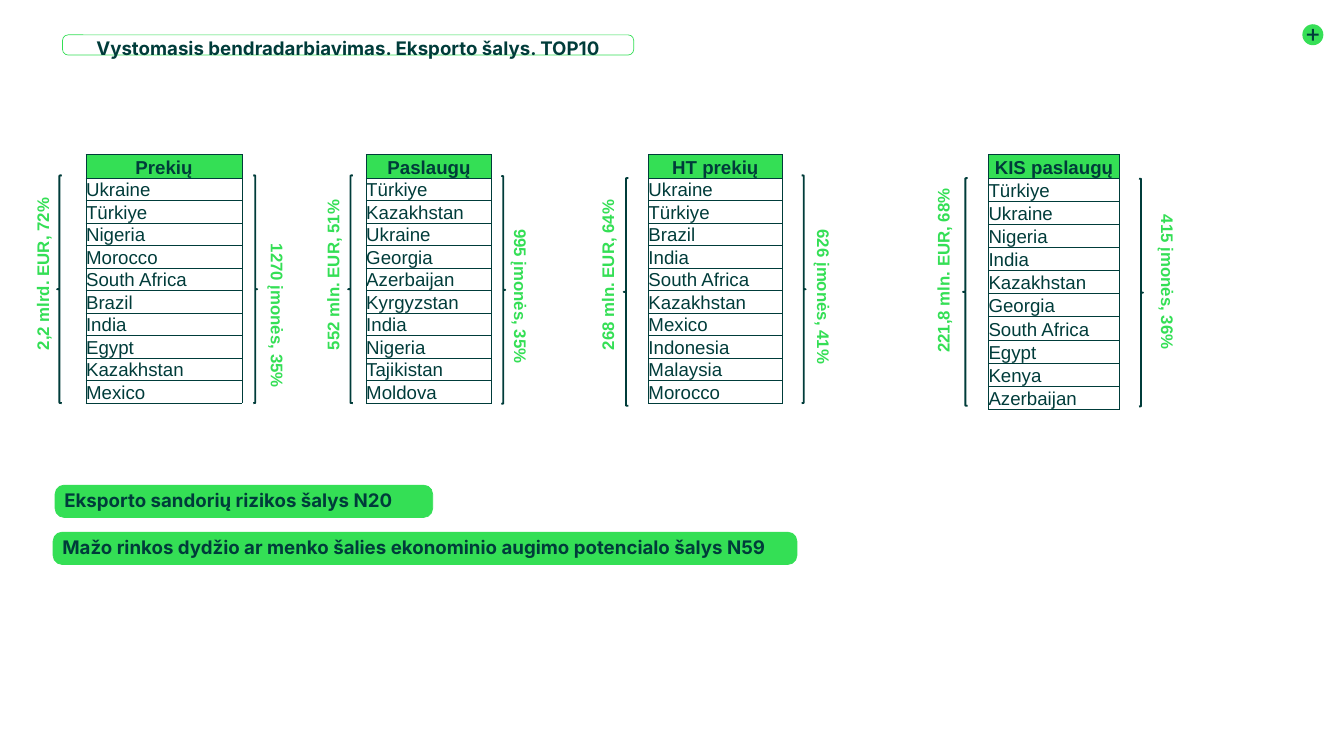
from dataclasses import dataclass

from lxml import etree
from pptx import Presentation
from pptx.dml.color import RGBColor
from pptx.enum import shapes, text
from pptx.oxml import ns
from pptx.util import Pt


@dataclass(frozen=True)
class Theme:
    """Colours, fonts and type sizes of the slide."""
    green: str = "34DF55"
    badge: str = "36DF56"
    dark: str = "003C3A"
    body_font: str = "Arial"
    head_font: str = "Inter"
    label: int = 18
    body: int = 20


@dataclass(frozen=True)
class Side:
    """A brace and its vertical label, as offsets from the table corner."""
    label: str
    brace: tuple
    label_at: tuple


T = Theme()
HEADER_H, BRACE_H, LABEL_BOX = 25.2, 244, 72
PANELS = [
    ((92.2, 165.6, 167), 24.1, "Prekių",
     ["Ukraine", "Türkiye", "Nigeria", "Morocco", "South Africa",
      "Brazil", "India", "Egypt", "Kazakhstan", "Mexico"],
     Side("2,2 mlrd. EUR, 72%", (-31, 22.3), (-61.2, 144.7)),
     Side("1270 įmonės, 35%", (179.2, 22.3), (147.6, 88.6))),
    ((392.4, 165.6, 134.6), 24.1, "Paslaugų",
     ["Türkiye", "Kazakhstan", "Ukraine", "Georgia", "Azerbaijan",
      "Kyrgyzstan", "India", "Nigeria", "Tajikistan", "Moldova"],
     Side("552 mln. EUR, 51%", (-19.4, 22.3), (-50.4, 144.7)),
     Side("995 įmonės, 35%", (144.7, 23), (108, 72.7))),
    ((694.8, 165.6, 143.3), 24.1, "HT prekių",
     ["Ukraine", "Türkiye", "Brazil", "India", "South Africa",
      "Kazakhstan", "Mexico", "Indonesia", "Malaysia", "Morocco"],
     Side("268 mln. EUR, 64%", (-26.6, 25.2), (-58.3, 144.7)),
     Side("626 įmonės, 41%", (164.2, 22.3), (130.3, 73.4))),
    ((1059.1, 165.6, 140.4), 24.8, "KIS paslaugų",
     ["Türkiye", "Ukraine", "Nigeria", "India", "Kazakhstan",
      "Georgia", "South Africa", "Egypt", "Kenya", "Azerbaijan"],
     Side("221,8 mln. EUR, 68%", (-27.3, 25.2), (-63.3, 147.6)),
     Side("415 įmonės, 36%", (161.3, 25.9), (134.7, 57.6))),
]


def rgb(color):
    """Turn a hex string into a colour."""
    return RGBColor.from_string(color)


def set_font(p, name, size, color, bold):
    """Style a whole paragraph."""
    f = p.font
    f.name, f.size, f.bold = name, Pt(size), bold
    f.color.rgb = rgb(color)


def set_margins(target, size):
    """Give a cell or text frame the same margin on every side."""
    target.margin_left = target.margin_right = Pt(size)
    target.margin_top = target.margin_bottom = Pt(size)


def add_shape(parent, kind, box, fill=None, line=None, width=0.75):
    """Add a flat preset shape."""
    sp = parent.shapes.add_shape(kind, *map(Pt, box))
    sp.shadow.inherit = False
    if fill:
        sp.fill.solid()
        sp.fill.fore_color.rgb = rgb(fill)
    else:
        sp.fill.background()
    if line:
        sp.line.color.rgb = rgb(line)
        sp.line.width = Pt(width)
    else:
        sp.line.fill.background()
    return sp


def add_badge(s, box):
    """Draw the round plus badge."""
    x, y, w, h = box
    long, thin = 12.6, 2.2
    g = s.shapes.add_group_shape()
    add_shape(g, shapes.MSO_SHAPE.OVAL, box, T.badge)
    for bw, bh in ((thin, long), (long, thin)):
        bar = (x + (w - bw) / 2, y + (h - bh) / 2, bw, bh)
        add_shape(g, shapes.MSO_SHAPE.RECTANGLE, bar, T.dark)


def add_pill(s, box, words, fill=None, align=text.PP_ALIGN.LEFT):
    """Draw a rounded heading bar."""
    sp = add_shape(s, shapes.MSO_SHAPE.ROUNDED_RECTANGLE, box, fill, T.green)
    sp.adjustments[0] = 0.279
    tf = sp.text_frame
    tf.word_wrap = True
    tf.vertical_anchor = text.MSO_ANCHOR.TOP
    p = tf.paragraphs[0]
    p.text, p.alignment, p.line_spacing = words, align, 0.9
    set_font(p, T.head_font, T.body, T.dark, True)


def add_side(s, origin, side, kind, width, direction):
    """Draw a brace with its vertical label beside a table."""
    x, y = origin
    dx, dy = side.brace
    add_shape(s, kind, (x + dx, y + dy, width, BRACE_H), line=T.dark, width=2)
    dx, dy = side.label_at
    sp = s.shapes.add_textbox(Pt(x + dx), Pt(y + dy), Pt(LABEL_BOX), Pt(LABEL_BOX))
    tf = sp.text_frame
    tf.word_wrap = False
    set_margins(tf, 3.6)
    tf._txBody.bodyPr.set("vert", direction)
    p = tf.paragraphs[0]
    p.text = side.label
    set_font(p, T.body_font, T.label, T.green, True)


def set_borders(cell):
    """Outline a cell on all four sides."""
    pr = cell._tc.get_or_add_tcPr()
    for tag in ("a:lnL", "a:lnR", "a:lnT", "a:lnB"):
        ln = etree.SubElement(pr, ns.qn(tag), w=str(Pt(1)))
        fill = etree.SubElement(ln, ns.qn("a:solidFill"))
        etree.SubElement(fill, ns.qn("a:srgbClr"), val=T.dark)


def add_country_table(s, box, row_h, header, countries):
    """Draw a one-column ranking under a green header."""
    x, y, w = box
    rows = [header, *countries]
    height = HEADER_H + row_h * len(countries)
    table = s.shapes.add_table(len(rows), 1, Pt(x), Pt(y), Pt(w), Pt(height)).table
    table.horz_banding = False
    for i, words in enumerate(rows):
        is_header = i == 0
        table.rows[i].height = Pt(HEADER_H if is_header else row_h)
        cell = table.cell(i, 0)
        set_margins(cell, 0)
        cell.vertical_anchor = text.MSO_ANCHOR.BOTTOM
        set_borders(cell)
        if is_header:
            cell.fill.solid()
            cell.fill.fore_color.rgb = rgb(T.green)
        else:
            cell.fill.background()
        p = cell.text_frame.paragraphs[0]
        p.text = words
        p.alignment = text.PP_ALIGN.CENTER if is_header else text.PP_ALIGN.LEFT
        set_font(p, T.body_font, T.body, T.dark, is_header)


def add_panel(s, box, row_h, header, countries, left, right):
    """Draw one ranking with the braces on both sides."""
    add_country_table(s, box, row_h, header, countries)
    add_side(s, box[:2], left, shapes.MSO_SHAPE.LEFT_BRACE, 5, "vert270")
    add_side(s, box[:2], right, shapes.MSO_SHAPE.RIGHT_BRACE, 4.3, "vert")


def main():
    """Build the export countries slide."""
    prs = Presentation()
    prs.slide_width, prs.slide_height = Pt(1440), Pt(810)
    s = prs.slides.add_slide(prs.slide_layouts[6])
    add_badge(s, (1395.4, 26, 22.5, 22.5))
    for panel in PANELS:
        add_panel(s, *panel)
    add_pill(s, (67, 37.4, 612, 21.6),
             "Vystomasis bendradarbiavimas. Eksporto šalys. TOP10",
             align=text.PP_ALIGN.CENTER)
    add_pill(s, (59, 519.8, 404.6, 34.6),
             "Eksporto sandorių rizikos šalys N20", T.green)
    add_pill(s, (56.9, 570.2, 797, 34.6),
             "Mažo rinkos dydžio ar menko šalies ekonominio augimo potencialo šalys N59",
             T.green)
    prs.save("out.pptx")


if __name__ == "__main__":
    main()
